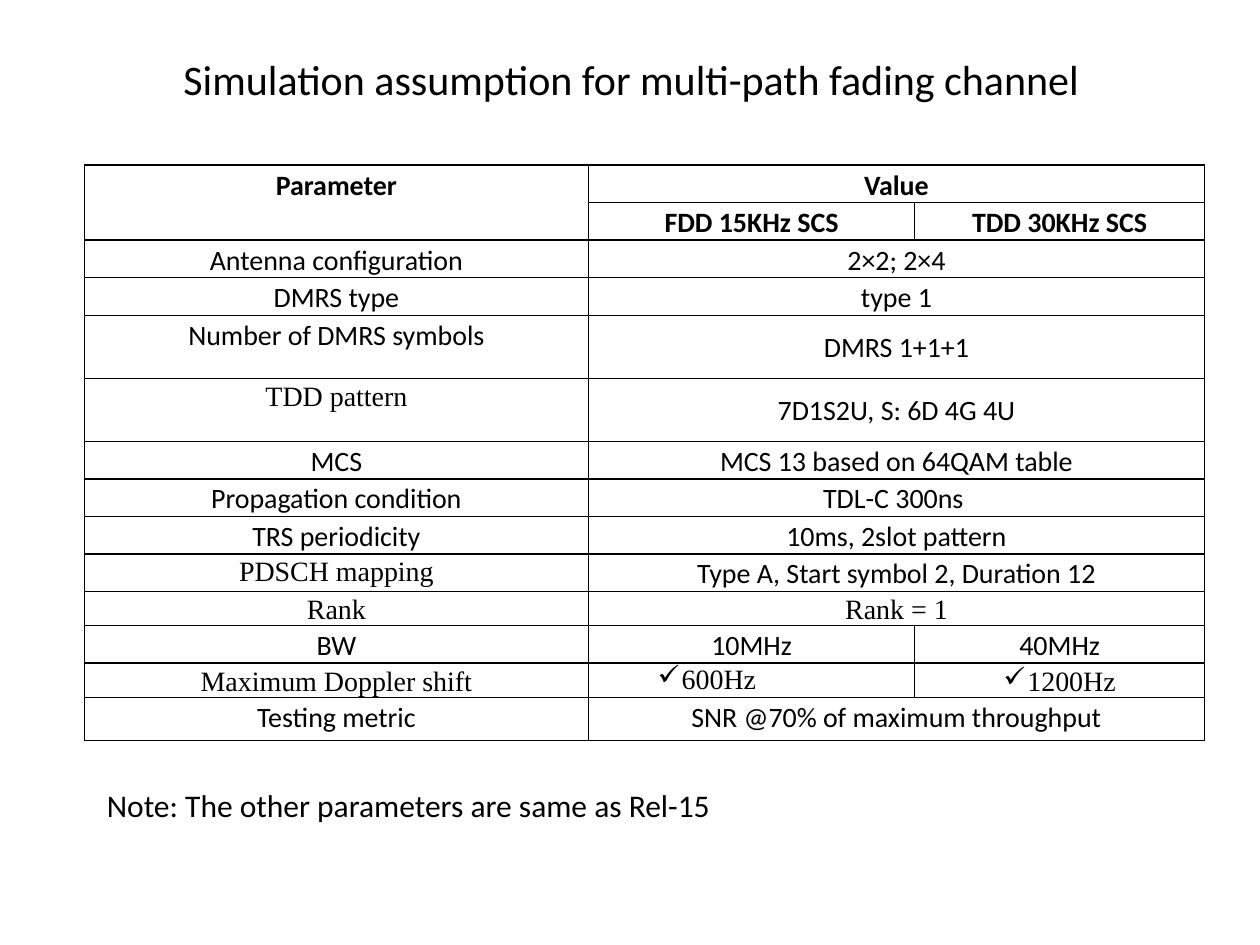
from lxml import etree
from pptx import Presentation
from pptx.dml.color import RGBColor
from pptx.enum.text import MSO_ANCHOR as Anchor, MSO_AUTO_SIZE as AutoSize, PP_ALIGN as Align
from pptx.oxml import parse_xml
from pptx.oxml.ns import nsdecls, qn
from pptx.util import Inches, Pt

BLACK = RGBColor(0x00, 0x00, 0x00)
SANS, SERIF = "Calibri", "Times New Roman"

COLUMN_WIDTHS = [4, 2.59, 2.3]
ROW_HEIGHT, SERIF_HEIGHT, TALL_HEIGHT, LAST_HEIGHT = 0.29, 0.27, 0.5, 0.34

# Each row: height, then its texts; two texts means the value spans both modes
ROWS = [
    (ROW_HEIGHT, ["Parameter", "Value"]),
    (ROW_HEIGHT, [None, "FDD 15KHz SCS", "TDD 30KHz SCS"]),
    (ROW_HEIGHT, ["Antenna configuration", "2×2; 2×4"]),
    (ROW_HEIGHT, ["DMRS type", "type 1"]),
    (TALL_HEIGHT, ["Number of DMRS symbols", "DMRS 1+1+1"]),
    (TALL_HEIGHT, ["TDD pattern", "7D1S2U, S: 6D 4G 4U"]),
    (ROW_HEIGHT, ["MCS", "MCS 13 based on 64QAM table"]),
    (ROW_HEIGHT, ["Propagation condition", "TDL-C 300ns "]),
    (ROW_HEIGHT, ["TRS periodicity", "10ms, 2slot pattern"]),
    (ROW_HEIGHT, ["PDSCH mapping", "Type A, Start symbol 2, Duration 12"]),
    (SERIF_HEIGHT, ["Rank", "Rank = 1"]),
    (ROW_HEIGHT, ["BW", "10MHz", "40MHz"]),
    (SERIF_HEIGHT, ["Maximum Doppler shift", "600Hz", "1200Hz"]),
    (LAST_HEIGHT, ["Testing metric", "SNR @70% of maximum throughput"]),
]
HEADER_ROWS = 2
SERIF_TEXTS = {"TDD pattern", "PDSCH mapping", "Rank", "Rank = 1",
               "Maximum Doppler shift", "600Hz", "1200Hz"}
# Left indent and alignment of the ticked entries
TICKED = {"600Hz": (0.69, Align.LEFT), "1200Hz": (0.19, Align.CENTER)}


def write_text(frame, text, size=16, font=SANS, bold=False, align=Align.LEFT, spacing=None):
    paragraph = frame.paragraphs[0]
    paragraph.alignment = align
    if spacing:
        paragraph.line_spacing = spacing
    run = paragraph.add_run()
    run.text = text
    run.font.size = Pt(size)
    run.font.name = font
    run.font.bold = bold
    run.font.color.rgb = BLACK
    return paragraph


def add_tick(paragraph, left):
    properties = paragraph._p.get_or_add_pPr()
    properties.set("marL", str(Inches(left)))
    properties.set("indent", str(Inches(-0.19)))
    etree.SubElement(properties, qn("a:buChar")).set("char", "✓")


def format_cell(cell):
    cell.margin_left = cell.margin_right = Inches(0.05)
    cell.margin_top, cell.margin_bottom = Inches(0.01), 0
    properties = cell._tc.get_or_add_tcPr()
    for side in "LRTB":
        properties.append(parse_xml(
            f'<a:ln{side} {nsdecls("a")} w="{Pt(1)}"><a:solidFill>'
            f'<a:srgbClr val="{BLACK}"/></a:solidFill></a:ln{side}>'))
    cell.fill.background()


class SlideBuilder:
    def __init__(self, presentation):
        self.slide = presentation.slides.add_slide(presentation.slide_layouts[5])

    def title(self, text, left, top, width, height):
        shape = self.slide.shapes.title
        shape.left, shape.top = Inches(left), Inches(top)
        shape.width, shape.height = Inches(width), Inches(height)
        shape.text_frame.vertical_anchor = Anchor.MIDDLE
        write_text(shape.text_frame, text, size=24, align=Align.CENTER)

    def table(self, left, top):
        heights = [height for height, _ in ROWS]
        table = self.slide.shapes.add_table(
            len(ROWS), len(COLUMN_WIDTHS), Inches(left), Inches(top),
            Inches(sum(COLUMN_WIDTHS)), Inches(sum(heights))).table
        table.first_row = table.horz_banding = False
        for column, width in zip(table.columns, COLUMN_WIDTHS):
            column.width = Inches(width)
        for row_index, (height, texts) in enumerate(ROWS):
            table.rows[row_index].height = Inches(height)
            for cell in table.rows[row_index].cells:
                format_cell(cell)
            if len(texts) == 2:
                table.cell(row_index, 1).merge(table.cell(row_index, 2))
            for column_index, text in enumerate(texts):
                if text:
                    self.fill_cell(table.cell(row_index, column_index), text,
                                   bold=row_index < HEADER_ROWS)
            if height == TALL_HEIGHT:
                table.cell(row_index, 1).vertical_anchor = Anchor.MIDDLE
        table.cell(0, 0).merge(table.cell(1, 0))

    def fill_cell(self, cell, text, bold):
        left, align = TICKED.get(text, (None, Align.CENTER))
        paragraph = write_text(
            cell.text_frame, text, bold=bold, align=align,
            font=SERIF if text in SERIF_TEXTS else SANS,
            spacing=1.06 if align == Align.CENTER else None)
        if left:
            paragraph.level = 0 if align == Align.CENTER else 1
            add_tick(paragraph, left)

    def note(self, text, left, top, width, height):
        box = self.slide.shapes.add_textbox(
            Inches(left), Inches(top), Inches(width), Inches(height))
        box.text_frame.word_wrap = False
        box.text_frame.auto_size = AutoSize.SHAPE_TO_FIT_TEXT
        write_text(box.text_frame, text, size=18)


def main():
    presentation = Presentation()
    presentation.slide_width, presentation.slide_height = Inches(10), Inches(7.5)
    builder = SlideBuilder(presentation)
    builder.title("Simulation assumption for multi-path fading channel", 0.51, 0, 9, 1.25)
    builder.table(0.67, 1.31)
    builder.note("Note: The other parameters are same as Rel-15", 0.75, 6.19, 5.05, 0.4)
    presentation.save("out.pptx")


if __name__ == "__main__":
    main()
